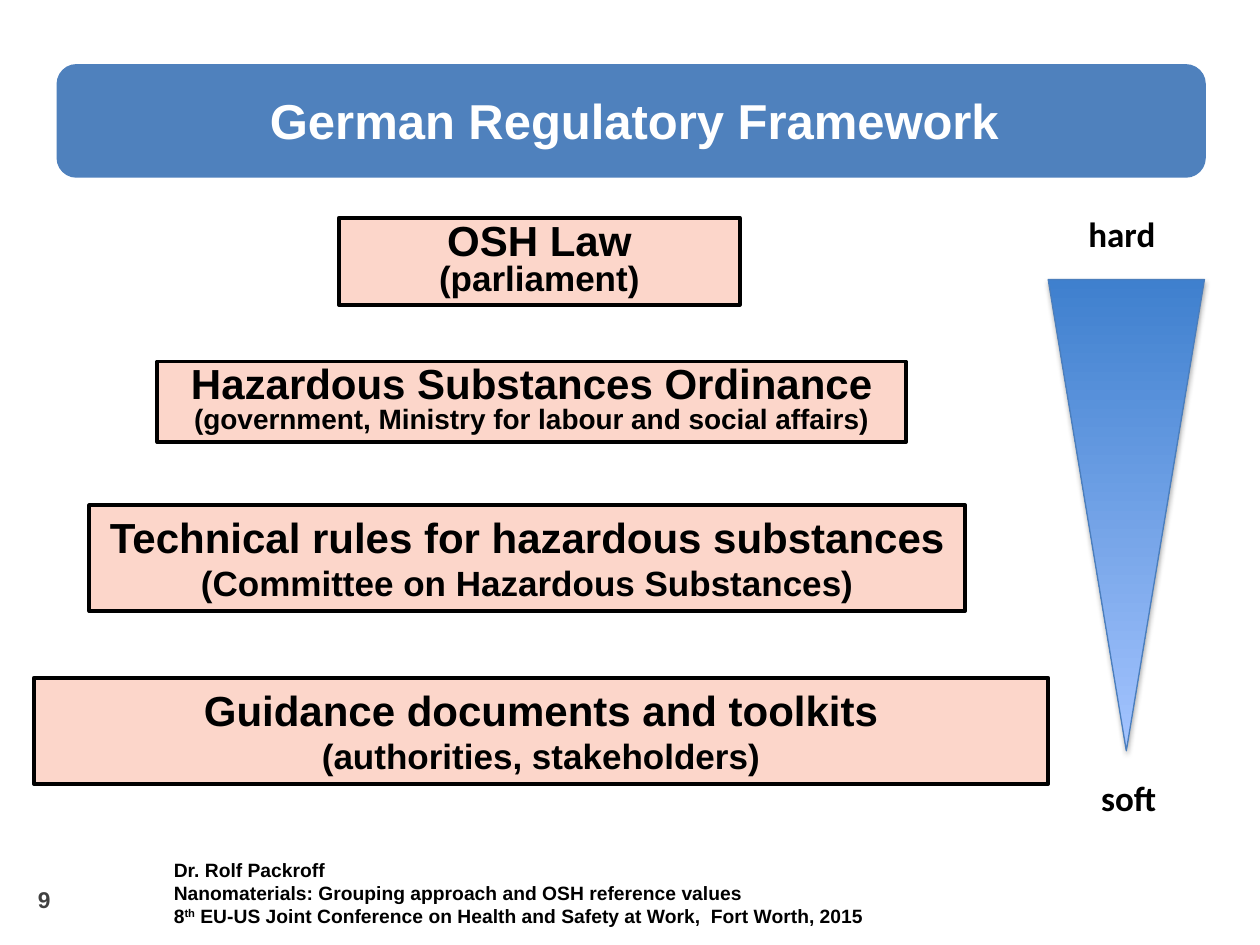
from typing import NamedTuple, Optional

from lxml.etree import SubElement
from pptx import Presentation
from pptx.dml.color import RGBColor
from pptx.enum.shapes import MSO_SHAPE as Preset
from pptx.enum.text import MSO_ANCHOR as Anchor, MSO_AUTO_SIZE as AutoSize, PP_ALIGN as Align
from pptx.oxml.ns import qn
from pptx.util import Pt

BLACK = RGBColor(0x00, 0x00, 0x00)
WHITE = RGBColor(0xFF, 0xFF, 0xFF)
GREY = RGBColor(0x40, 0x40, 0x40)
BLUE = RGBColor(0x4F, 0x81, 0xBD)
PINK = RGBColor(0xFC, 0xD6, 0xCA)
EDGE_BLUE = RGBColor(0x4B, 0x7E, 0xBC)
HARD_BLUE = RGBColor(0x3F, 0x80, 0xCE)
SOFT_BLUE = RGBColor(0xA4, 0xC4, 0xFF)


class Box(NamedTuple):
    left: float
    top: float
    width: float
    height: float

    def lengths(self) -> list:
        return [Pt(value) for value in self]


class Run(NamedTuple):
    text: str
    size: float
    baseline: int = 0


class Level(NamedTuple):
    box: Box
    paragraphs: list
    spacing: Optional[float] = None


class Label(NamedTuple):
    box: Box
    paragraphs: list
    font: str = "Arial"
    color: RGBColor = BLACK
    align: Align = Align.LEFT
    wrap: bool = True
    frame: dict = {}


LEVELS = [
    Level(Box(193.7, 124.5, 229, 49.7),
          [[Run("OSH Law", 24)], [Run("(parliament)", 20)]], 0.8),
    Level(Box(90, 206.6, 427.7, 46.1),
          [[Run("Hazardous Substances Ordinance", 24)],
           [Run("(government, Ministry for labour and social affairs)", 16)]], 0.8),
    Level(Box(51.1, 288.7, 500.4, 60.5),
          [[Run("Technical rules for hazardous substances ", 24),
            Run("(Committee on Hazardous Substances)", 20)]]),
    Level(Box(19.4, 387.4, 579.6, 60.5),
          [[Run("Guidance documents and toolkits\n", 24),
            Run("(authorities, stakeholders)", 20)]]),
]

LABELS = [
    Label(Box(92.2, 486.7, 454.3, 47.5),
          [[Run("Dr. Rolf Packroff\nNanomaterials: Grouping approach and OSH reference values", 11)],
           [Run("8", 11), Run("th", 11, 30000),
            Run(" EU-US Joint Conference on Health and Safety at Work,  Fort Worth, 2015", 11)]]),
    Label(Box(21.6, 506.2, 41, 28.8), [[Run("9", 13)]], color=GREY,
          frame={"margin_left": 0, "margin_top": 0, "margin_bottom": 0,
                 "auto_size": AutoSize.NONE}),
    Label(Box(43.2, 48.2, 638.6, 41), [[Run("German Regulatory Framework", 28)]],
          color=WHITE, align=Align.CENTER),
    Label(Box(614.9, 118.1, 53.3, 31.7), [[Run("hard", 20)]], font="Calibri", wrap=False),
    Label(Box(622.1, 439.9, 46.8, 31.7), [[Run("soft", 20)]], font="Calibri", wrap=False),
]


def set_values(target, values: dict) -> None:
    for name, value in values.items():
        setattr(target, name, value)


def add_run(paragraph, run: Run, font: str, color: RGBColor) -> None:
    for index, part in enumerate(run.text.split("\n")):
        if index:
            paragraph.add_line_break()
            line_break = paragraph._p.findall(qn("a:br"))[-1]
            SubElement(line_break, qn("a:rPr"), sz=str(int(run.size * 100)))
        if part:
            text_run = paragraph.add_run()
            text_run.text = part
            set_values(text_run.font, {"name": font, "size": Pt(run.size), "bold": True})
            text_run.font.color.rgb = color
            if run.baseline:
                text_run.font._element.set("baseline", str(run.baseline))


def write_text(shape, paragraphs: list, font: str, color: RGBColor, align: Align,
               spacing: Optional[float] = None, frame: Optional[dict] = None) -> None:
    text_frame = shape.text_frame
    set_values(text_frame, {"word_wrap": True, "vertical_anchor": Anchor.TOP,
                            "auto_size": AutoSize.SHAPE_TO_FIT_TEXT, **(frame or {})})
    for index, runs in enumerate(paragraphs):
        paragraph = text_frame.add_paragraph() if index else text_frame.paragraphs[0]
        set_values(paragraph, {"alignment": align, "line_spacing": spacing})
        for run in runs:
            add_run(paragraph, run, font, color)


def add_filled(slide, preset: Preset, box: Box, fill: RGBColor, line: RGBColor, width: float):
    shape = slide.shapes.add_shape(preset, *box.lengths())
    shape.shadow.inherit = False
    shape.fill.solid()
    shape.fill.fore_color.rgb = fill
    shape.line.color.rgb = line
    shape.line.width = Pt(width)
    return shape


def add_level(slide, level: Level) -> None:
    shape = add_filled(slide, Preset.RECTANGLE, level.box, PINK, BLACK, 2.25)
    write_text(shape, level.paragraphs, "Arial", BLACK, Align.CENTER, level.spacing)


def add_label(slide, label: Label) -> None:
    shape = slide.shapes.add_textbox(*label.box.lengths())
    write_text(shape, label.paragraphs, label.font, label.color, label.align,
               frame={"word_wrap": label.wrap, **label.frame})


def add_wedge(slide, box: Box) -> None:
    shape = add_filled(slide, Preset.ISOSCELES_TRIANGLE, box, HARD_BLUE, EDGE_BLUE, 0.75)
    shape.fill.gradient()
    shape.fill.gradient_angle = 90
    for stop, color in zip(shape.fill.gradient_stops, (HARD_BLUE, SOFT_BLUE)):
        stop.color.rgb = color
    properties = shape._element.spPr
    properties.find(qn("a:xfrm")).set("flipV", "1")
    shadow = SubElement(properties.find(qn("a:effectLst")), qn("a:outerShdw"),
                        blurRad=str(Pt(3.1)), dist=str(Pt(1.8)), dir="5400000", rotWithShape="0")
    shade = SubElement(shadow, qn("a:srgbClr"), val=str(BLACK))
    SubElement(shade, qn("a:alpha"), val="35000")


def main() -> None:
    """Build the regulatory framework slide."""
    presentation = Presentation()
    presentation.slide_width, presentation.slide_height = Pt(720), Pt(540)
    slide = presentation.slides.add_slide(presentation.slide_layouts[6])
    add_filled(slide, Preset.ROUNDED_RECTANGLE, Box(33.1, 37.4, 655.2, 63.4), BLUE, BLUE, 1.5)
    for level in LEVELS:
        add_level(slide, level)
    add_wedge(slide, Box(599, 159.8, 89.3, 269.3))
    for label in LABELS:
        add_label(slide, label)
    presentation.save("out.pptx")


if __name__ == "__main__":
    main()
